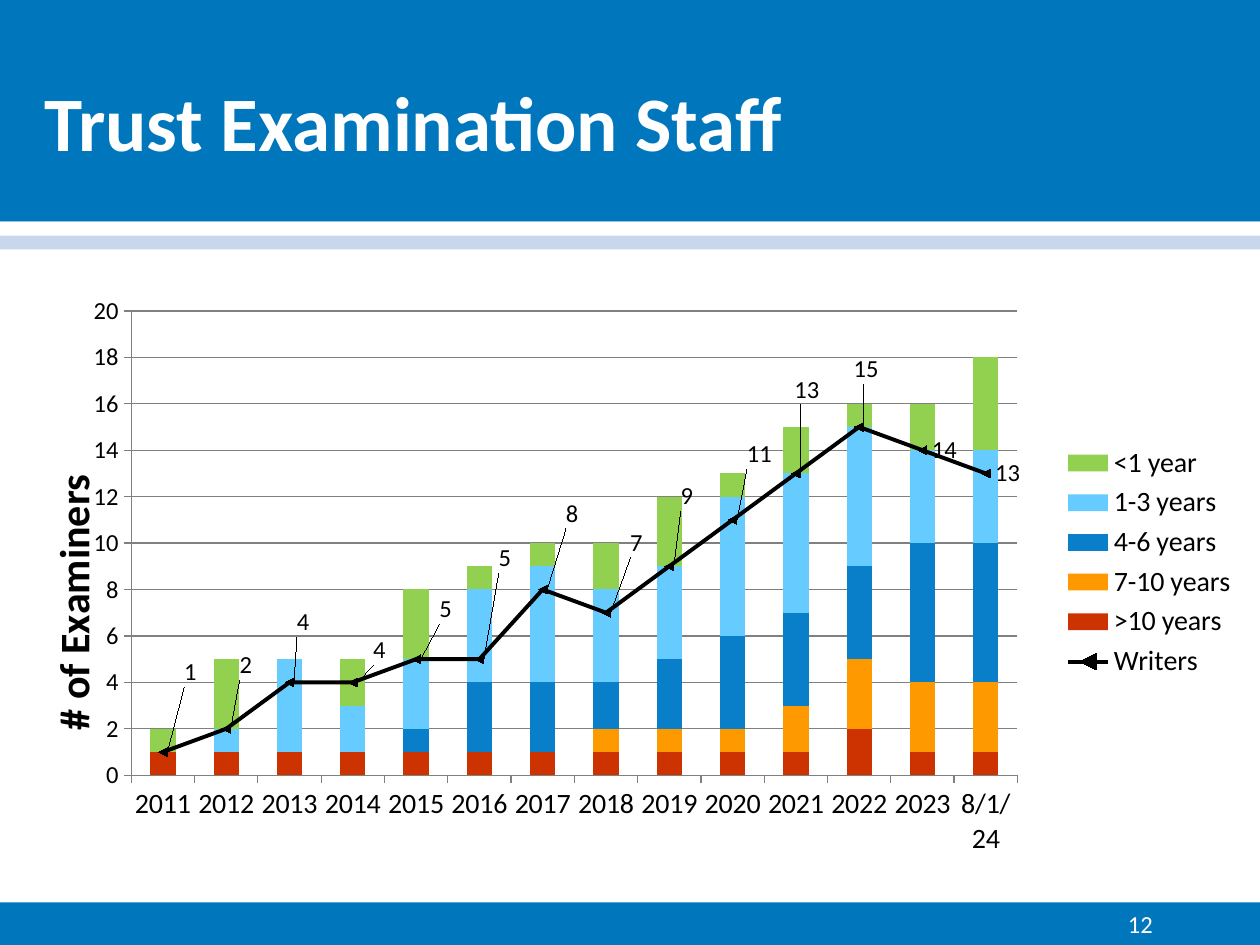
from dataclasses import dataclass
from typing import Any

import lxml.etree
import pptx
import pptx.chart.data
import pptx.dml.color
import pptx.enum.chart
import pptx.enum.shapes
import pptx.enum.text
import pptx.oxml
import pptx.oxml.ns
import pptx.util

Cm = pptx.util.Cm
Pt = pptx.util.Pt
RGBColor = pptx.dml.color.RGBColor
qn = pptx.oxml.ns.qn

BLUE = RGBColor(0x00, 0x76, 0xBC)
PALE_BLUE = RGBColor(0xC8, 0xD7, 0xEE)
WHITE = RGBColor(0xFF, 0xFF, 0xFF)
BLACK = RGBColor(0x00, 0x00, 0x00)
GREY = RGBColor(0x80, 0x80, 0x80)
RED = RGBColor(0xCC, 0x33, 0x00)
ORANGE = RGBColor(0xFF, 0x99, 0x00)
MID_BLUE = RGBColor(0x08, 0x7F, 0xC8)
SKY = RGBColor(0x66, 0xCC, 0xFF)
GREEN = RGBColor(0x92, 0xD0, 0x50)

PAGE_WIDTH, PAGE_HEIGHT = 25.4, 19.05
CHART_WIDTH, CHART_HEIGHT = 25.2, 13.77

YEARS = [str(year) for year in range(2011, 2024)] + ["8/1/24"]
EXPERIENCE = [
    (">10 years", RED, [1, 1, 1, 1, 1, 1, 1, 1, 1, 1, 1, 2, 1, 1]),
    ("7-10 years", ORANGE, [0, 0, 0, 0, 0, 0, 0, 1, 1, 1, 2, 3, 3, 3]),
    ("4-6 years", MID_BLUE, [0, 0, 0, 0, 1, 3, 3, 2, 3, 4, 4, 4, 6, 6]),
    ("1-3 years", SKY, [0, 1, 4, 2, 3, 4, 5, 4, 4, 6, 6, 6, 4, 4]),
    ("<1 year", GREEN, [1, 3, 0, 2, 3, 1, 1, 2, 3, 1, 2, 1, 2, 4]),
]
WRITERS = [1, 2, 4, 4, 5, 5, 8, 7, 9, 11, 13, 15, 14, 13]
WRITER_LABEL_SHIFTS = [
    (0.24, -1.61), (0.08, -1.29), (-0.04, -1.21), (0.22, -0.65),
    (0.28, -1.01), (0.2, -2.04), (0.28, -1.53), (0.3, -1.41),
    (0.04, -1.41), (0.1, -1.33), (-0.22, -1.69), (-0.3, -1.17),
]


def manual_layout(inner=False, edge=False, **fractions):
    layout = lxml.etree.Element(qn("c:layout"))
    manual = lxml.etree.SubElement(layout, qn("c:manualLayout"))
    settings = {"layoutTarget": "inner"} if inner else {}
    if edge:
        settings.update(xMode="edge", yMode="edge")
    settings.update(fractions)
    for tag, value in settings.items():
        lxml.etree.SubElement(manual, qn("c:" + tag)).set("val", str(value))
    return layout


def set_layout(parent, index, layout):
    for previous in parent.findall(qn("c:layout")):
        parent.remove(previous)
    parent.insert(index, layout)


@dataclass
class StaffSlide:
    slide: Any
    font_name: str = "Calibri"

    def style(self, font, size, color, bold=False):
        font.name, font.size, font.bold = self.font_name, Pt(size), bold
        font.color.rgb = color

    def band(self, top, height, color):
        band = self.slide.shapes.add_shape(
            pptx.enum.shapes.MSO_SHAPE.RECTANGLE,
            Cm(0), Cm(top), Cm(PAGE_WIDTH), Cm(height))
        band.shadow.inherit = False
        band.fill.solid()
        band.fill.fore_color.rgb = color
        band.line.fill.background()

    def text(self, wording, box, size, anchor, align, bold=False):
        frame = self.slide.shapes.add_textbox(*map(Cm, box)).text_frame
        frame.word_wrap = True
        frame.vertical_anchor = anchor
        paragraph = frame.paragraphs[0]
        paragraph.alignment = align
        run = paragraph.add_run()
        run.text = wording
        self.style(run.font, size, WHITE, bold)

    def axis(self, axis, size):
        axis.major_tick_mark = pptx.enum.chart.XL_TICK_MARK.OUTSIDE
        axis.format.line.color.rgb = GREY
        self.style(axis.tick_labels.font, size, BLACK)

    def staff_chart(self, left, top):
        data = pptx.chart.data.CategoryChartData()
        data.categories = YEARS
        for name, _, counts in EXPERIENCE:
            data.add_series(name, counts)
        data.add_series("Writers", WRITERS)
        chart = self.slide.shapes.add_chart(
            pptx.enum.chart.XL_CHART_TYPE.COLUMN_STACKED,
            Cm(left), Cm(top), Cm(CHART_WIDTH), Cm(CHART_HEIGHT), data).chart
        chart.has_title = False
        self.style(chart.font, 14, BLACK)

        self.axis(chart.category_axis, 16)
        counts_axis = chart.value_axis
        self.axis(counts_axis, 14)
        counts_axis.minimum_scale, counts_axis.maximum_scale = 0, 20
        counts_axis.major_unit = 2
        counts_axis.major_gridlines.format.line.color.rgb = GREY
        heading = counts_axis.axis_title
        run = heading.text_frame.paragraphs[0].add_run()
        run.text = "# of Examiners"
        self.style(run.font, 24, BLACK, True)
        set_layout(heading._element, 1, manual_layout(edge=True, x=0.03, y=0.36))

        chart.has_legend = True
        chart.legend.position = pptx.enum.chart.XL_LEGEND_POSITION.RIGHT
        chart.legend.include_in_layout = False
        self.style(chart.legend.font, 16, BLACK)

        columns = chart.plots[0]
        columns.gap_width, columns.overlap = 150, 100
        columns.vary_by_categories = False
        for series, (_, color, _) in zip(columns.series, EXPERIENCE):
            series.format.fill.solid()
            series.format.fill.fore_color.rgb = color
        self.writers_line(chart)
        set_layout(chart._chartSpace.chart.plotArea, 0, manual_layout(
            inner=True, edge=True, x=0.105, y=0.132, w=0.709, h=0.68))

    def writers_line(self, chart):
        bars = chart._chartSpace.chart.plotArea.find(qn("c:barChart"))
        writers = bars.findall(qn("c:ser"))[-1]
        for bar_setting in writers.findall(qn("c:invertIfNegative")):
            writers.remove(bar_setting)
        line = pptx.oxml.parse_xml(
            f'<c:lineChart {pptx.oxml.ns.nsdecls("c")}><c:grouping val="standard"/>'
            '<c:varyColors val="0"/><c:marker val="1"/></c:lineChart>')
        line.insert(2, writers)
        for axis_id in bars.findall(qn("c:axId")):
            lxml.etree.SubElement(line, qn("c:axId")).set("val", axis_id.get("val"))
        bars.addnext(line)

        series = chart.plots[1].series[0]
        series.smooth = False
        series.format.line.color.rgb = BLACK
        series.format.line.width = Pt(2.25)
        series.marker.style = pptx.enum.chart.XL_MARKER_STYLE.AUTOMATIC
        series.marker.size = 5
        series.marker.format.fill.solid()
        series.marker.format.fill.fore_color.rgb = BLACK
        series.marker.format.line.color.rgb = BLACK
        right = pptx.enum.chart.XL_LABEL_POSITION.RIGHT
        series.data_labels.show_value = True
        series.data_labels.position = right
        self.style(series.data_labels.font, 14, BLACK)
        for index, (across, down) in enumerate(WRITER_LABEL_SHIFTS):
            label = series.points[index].data_label
            label.position = right
            self.style(label.font, 14, BLACK)
            entry = writers.find(qn("c:dLbls")).findall(qn("c:dLbl"))[index]
            set_layout(entry, 1, manual_layout(
                x=across / CHART_WIDTH, y=down / CHART_HEIGHT))


def main():
    deck = pptx.Presentation()
    deck.slide_width, deck.slide_height = Cm(PAGE_WIDTH), Cm(PAGE_HEIGHT)
    staff = StaffSlide(deck.slides.add_slide(deck.slide_layouts[6]))
    for top, height, color in [
        (3.81, 15.24, WHITE), (18.19, 0.86, BLUE), (0, 4.47, BLUE),
        (4.47, 0.28, WHITE), (4.75, 0.28, PALE_BLUE),
    ]:
        staff.band(top, height, color)
    anchor, align = pptx.enum.text.MSO_ANCHOR, pptx.enum.text.PP_ALIGN
    staff.text("Trust Examination Staff", (0.64, 0.84, 23.93, 3.18), 44,
               anchor.MIDDLE, align.LEFT, True)
    staff.text("12", (18.21, 17.78, 5.28, 1.27), 14, anchor.BOTTOM, align.RIGHT)
    staff.staff_chart(0, 4.45)
    deck.save("out.pptx")


if __name__ == "__main__":
    main()
